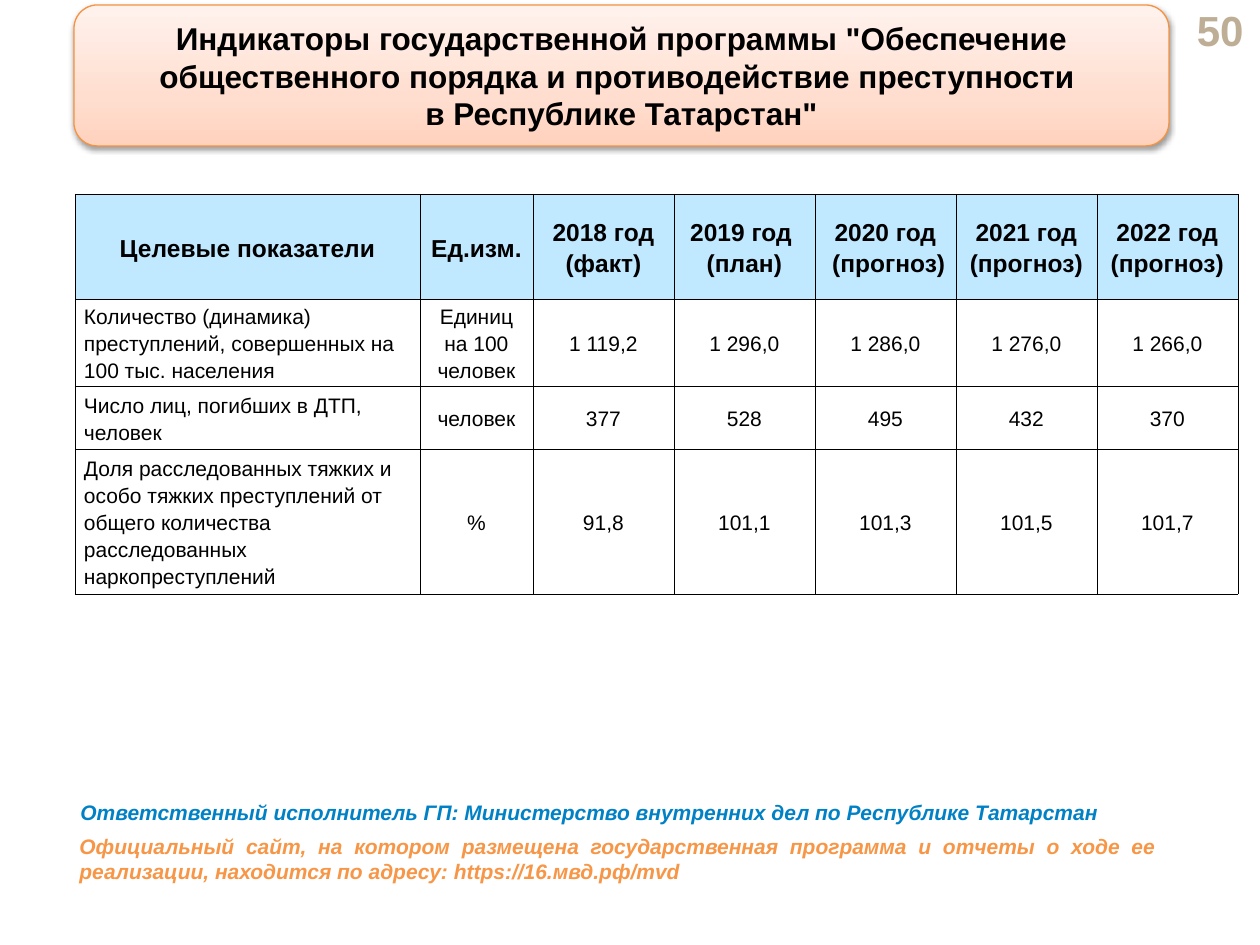
import copy

import pptx
import pptx.dml.color
import pptx.enum.shapes
import pptx.enum.text
import pptx.oxml
import pptx.oxml.ns
import pptx.util

PX = 914400 / 126
FONT = "Arial"
COLORS = {
    "text": "000000", "number": "BFAE96", "header": "C0E9FF", "border": "000000",
    "title_line": "F69240", "owner": "0081C5", "site": "F79646",
}
TITLE_STOPS = [(0, "FFD2BD"), (0.35, "FFDED0"), (1, "FFF2ED")]
ALIGN = pptx.enum.text.PP_ALIGN
MIDDLE = pptx.enum.text.MSO_ANCHOR.MIDDLE
qn = pptx.oxml.ns.qn

COLUMNS = [345, 113] + [141] * 5
ROWS = [105, 87, 63, 145]
TABLE = [
    ["Целевые показатели", "Ед.изм.", "2018 год\n(факт)", "2019 год \n(план)",
     "2020 год\n (прогноз)", "2021 год\n(прогноз)", "2022 год\n(прогноз)"],
    ["Количество (динамика) преступлений, совершенных на 100 тыс. населения",
     "Единиц на 100 человек", "1 119,2", "1 296,0", "1 286,0", "1 276,0", "1 266,0"],
    ["Число лиц, погибших в ДТП, человек", "человек", "377", "528", "495", "432", "370"],
    ["Доля расследованных тяжких и особо тяжких преступлений от общего количества "
     "расследованных наркопреступлений", "%", "91,8", "101,1", "101,3", "101,5", "101,7"],
]


def px(n):
    return pptx.util.Emu(round(n * PX))


def rgb(value):
    return pptx.dml.color.RGBColor.from_string(value)


def write(tf, paragraphs, size=12, color="text", bold=False, italic=False,
          align=ALIGN.CENTER, spacing=None):
    """Fill a text frame; a newline inside a paragraph becomes a line break."""
    tf.word_wrap = True
    tf.vertical_anchor = MIDDLE
    for i, text in enumerate(paragraphs):
        p = tf.add_paragraph() if i else tf.paragraphs[0]
        p.text = text.replace("\n", "\v")
        p.alignment = align
        p.line_spacing = spacing
        for r in p.runs:
            font = r.font
            font.name, font.size = FONT, pptx.util.Pt(size)
            font.bold, font.italic = bold, italic
            font.color.rgb = rgb(COLORS[color])
        for br in p._p.findall(qn("a:br")):
            br.append(copy.deepcopy(p.runs[0]._r.rPr))


def add_text(s, box, text, **style):
    tb = s.shapes.add_textbox(*map(px, box))
    write(tb.text_frame, [text], **style)


def add_title(s, box, paragraphs):
    shape_type = pptx.enum.shapes.MSO_SHAPE.ROUNDED_RECTANGLE
    sp = s.shapes.add_shape(shape_type, *map(px, box))
    sp.line.color.rgb = rgb(COLORS["title_line"])
    sp.line.width = pptx.util.Pt(0.75)
    sp.fill.gradient()
    sp.fill.gradient_angle = 90
    stops = sp._element.spPr.find(".//" + qn("a:gsLst"))
    stops.append(copy.deepcopy(stops[0]))
    for stop, (position, color) in zip(sp.fill.gradient_stops, TITLE_STOPS):
        stop.position = position
        stop.color.rgb = rgb(color)
    sp.shadow.inherit = False
    sp._element.spPr.find(qn("a:effectLst")).append(pptx.oxml.parse_xml(
        f'<a:outerShdw {pptx.oxml.ns.nsdecls("a")} blurRad="40000" dist="20000" '
        'dir="5400000" rotWithShape="0"><a:srgbClr val="000000">'
        '<a:alpha val="38000"/></a:srgbClr></a:outerShdw>'))
    write(sp.text_frame, paragraphs, size=18, bold=True)


def add_borders(cell):
    for side in ("lnL", "lnR", "lnT", "lnB"):
        cell._tc.get_or_add_tcPr().append(pptx.oxml.parse_xml(
            f'<a:{side} {pptx.oxml.ns.nsdecls("a")} w="3175"><a:solidFill>'
            f'<a:srgbClr val="{COLORS["border"]}"/></a:solidFill></a:{side}>'))


def add_indicators(s, left, top):
    box = map(px, (left, top, sum(COLUMNS), sum(ROWS)))
    table = s.shapes.add_table(len(ROWS), len(COLUMNS), *box).table
    table.first_row = table.horz_banding = False
    for column, width in zip(table.columns, COLUMNS):
        column.width = px(width)
    for i, (row, height) in enumerate(zip(table.rows, ROWS)):
        row.height = px(height)
        for j, cell in enumerate(row.cells):
            cell.margin_left = cell.margin_right = px(9)
            cell.margin_top = cell.margin_bottom = 0
            header = i == 0
            write(cell.text_frame, [TABLE[i][j]], size=14 if header else 12, bold=header,
                  align=ALIGN.CENTER if header or j else ALIGN.LEFT, spacing=1.15)
            cell.vertical_anchor = MIDDLE
            add_borders(cell)
            if header:
                cell.fill.solid()
                cell.fill.fore_color.rgb = rgb(COLORS["header"])
            else:
                cell.fill.background()


def add_notes(s, left, top):
    style = dict(bold=True, italic=True, align=ALIGN.JUSTIFY)
    add_text(s, (left + 1, top, 1176, 38),
             "Ответственный исполнитель ГП: Министерство внутренних дел "
             "по Республике Татарстан", color="owner", **style)
    add_text(s, (left, top + 34, 1102, 63),
             "Официальный сайт, на котором размещена государственная программа и отчеты "
             "о ходе ее реализации, находится по адресу: https://16.мвд.рф/mvd",
             color="site", **style)


def main():
    prs = pptx.Presentation()
    prs.slide_width, prs.slide_height = px(1260), px(945)
    s = prs.slides.add_slide(prs.slide_layouts[6])
    add_text(s, (1148, 8, 108, 43), "50", size=24, color="number", bold=True,
             align=ALIGN.RIGHT)
    add_title(s, (74, 5, 1095, 141), [
        'Индикаторы государственной программы "Обеспечение общественного порядка '
        'и противодействие преступности ', 'в Республике Татарстан"'])
    add_indicators(s, 75, 194)
    add_notes(s, 67, 793)
    prs.save("out.pptx")


if __name__ == "__main__":
    main()
